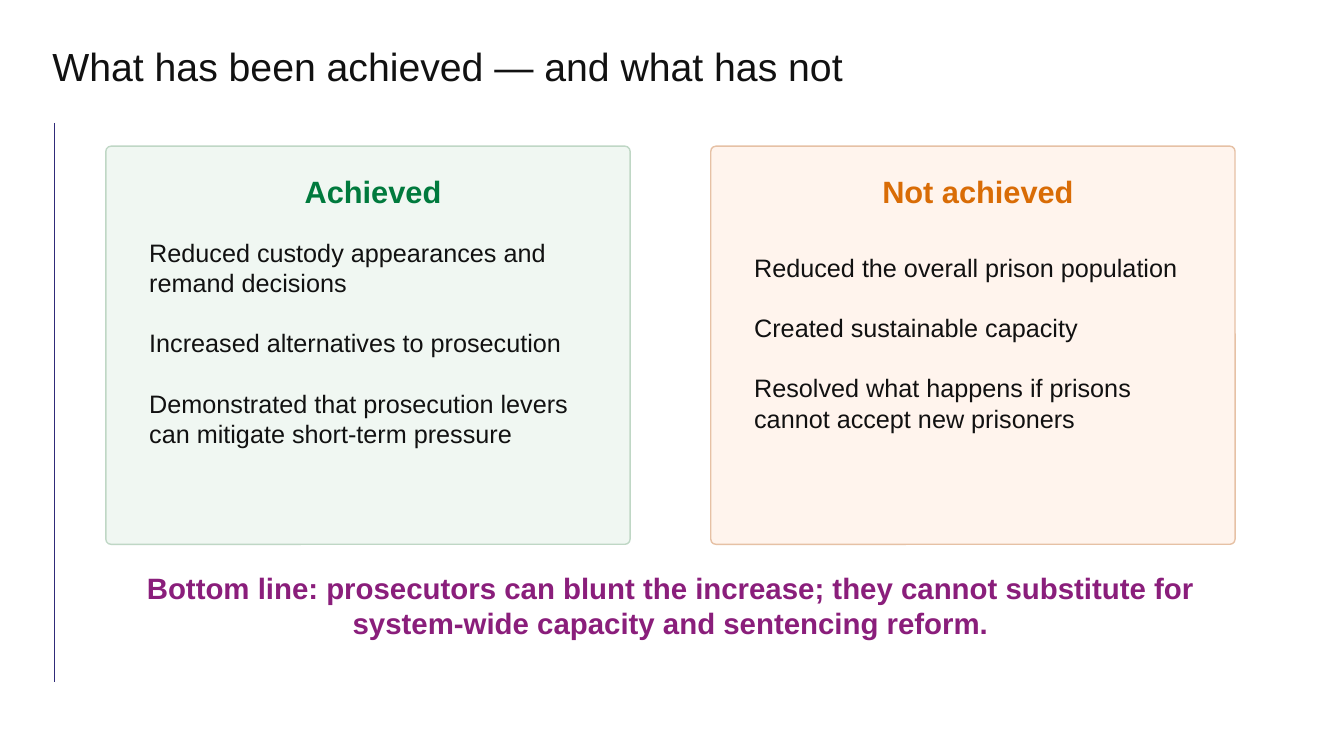
from lxml import etree
from pptx import Presentation
from pptx.dml.color import RGBColor
from pptx.enum.shapes import MSO_CONNECTOR, MSO_SHAPE
from pptx.enum.text import MSO_ANCHOR, PP_ALIGN
from pptx.oxml.ns import qn
from pptx.util import Inches, Pt

STRAIGHT = MSO_CONNECTOR.STRAIGHT
ROUNDED = MSO_SHAPE.ROUNDED_RECTANGLE
MIDDLE = MSO_ANCHOR.MIDDLE
LEFT, CENTER = PP_ALIGN.LEFT, PP_ALIGN.CENTER

INK = "111111"
CARD_LEFT, CARD_STEP = 1.05, 6
CARD_TOP, CARD_WIDTH, CARD_HEIGHT = 1.45, 5.2, 3.95


def color(hex_value):
    return RGBColor.from_string(hex_value)


def add_text(left, top, width, height, lines, size, ink, bold=False, align=LEFT, gap=0):
    """Place middle-anchored paragraphs, gap points apart, in a box given in inches."""
    frame = slide.shapes.add_textbox(
        Inches(left), Inches(top), Inches(width), Inches(height)).text_frame
    frame.word_wrap = True
    frame.vertical_anchor = MIDDLE
    frame.margin_left = frame.margin_right = frame.margin_top = frame.margin_bottom = 0
    frame.text = "\n".join(lines)
    for index, paragraph in enumerate(frame.paragraphs):
        paragraph.alignment = align
        if index and gap:
            paragraph.space_before = Pt(gap)
        paragraph.font.name = "Arial"
        paragraph.font.size = Pt(size)
        paragraph.font.bold = bold
        paragraph.font.color.rgb = color(ink)


deck = Presentation()
deck.slide_width, deck.slide_height = Inches(13.33), Inches(7.5)
slide = deck.slides.add_slide(deck.slide_layouts[6])

add_text(0.52, 0.38, 11.9, 0.55, ["What has been achieved — and what has not"], 28, INK)

margin_rule = slide.shapes.add_connector(
    STRAIGHT, Inches(0.54), Inches(1.22), Inches(0.54), Inches(6.77))
margin_rule.line.color.rgb = color("302B79")
margin_rule.line.width = Pt(1.2)
etree.SubElement(margin_rule._element.spPr, qn("a:effectLst"))

outcomes = [
    ("Achieved", "007A3D", "F0F7F2", "BFD7C5", [
        "Reduced custody appearances and remand decisions",
        "Increased alternatives to prosecution",
        "Demonstrated that prosecution levers can mitigate short-term pressure",
    ]),
    ("Not achieved", "D96C06", "FFF4ED", "E6C1A5", [
        "Reduced the overall prison population",
        "Created sustainable capacity",
        "Resolved what happens if prisons cannot accept new prisoners",
    ]),
]
for column, (heading, accent, tint, border, points) in enumerate(outcomes):
    left = CARD_LEFT + column * CARD_STEP
    card = slide.shapes.add_shape(
        ROUNDED, Inches(left), Inches(CARD_TOP), Inches(CARD_WIDTH), Inches(CARD_HEIGHT))
    card.adjustments[0] = 0.013
    card.shadow.inherit = False
    card.fill.solid()
    card.fill.fore_color.rgb = color(tint)
    card.line.color.rgb = color(border)
    card.line.width = Pt(1)
    add_text(left + 0.3, CARD_TOP + 0.27, 4.7, 0.35, [heading], 22, accent, True, CENTER)
    add_text(left + 0.43, CARD_TOP + 0.8, 4.45, 2.3, points, 18, INK, gap=21.5)

add_text(1.25, 5.78, 10.8, 0.45, [
    "Bottom line: prosecutors can blunt the increase; they cannot substitute for "
    "system-wide capacity and sentencing reform."], 21, "8A1E7B", True, CENTER)

deck.save("out.pptx")
